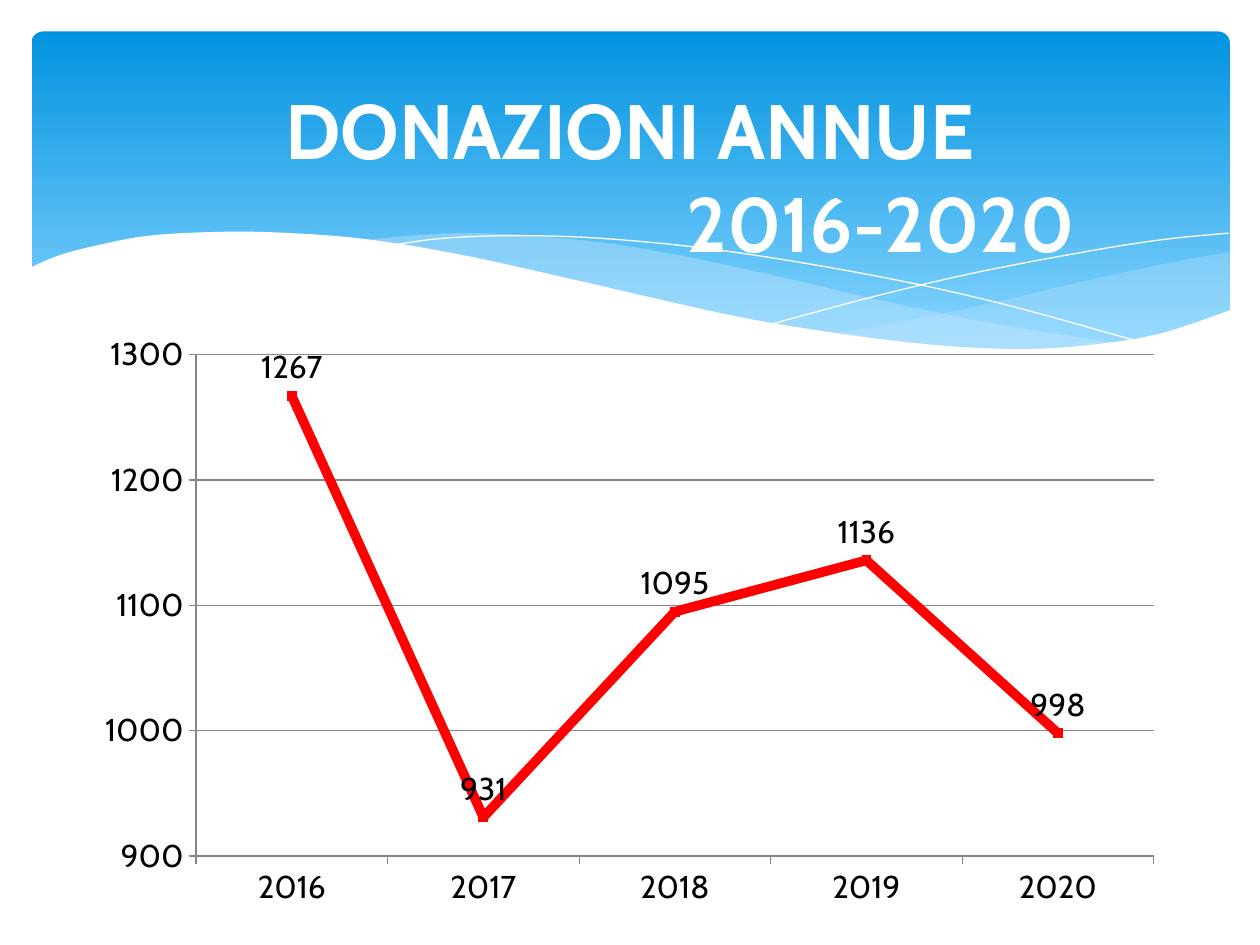
from lxml import etree
from pptx import Presentation
from pptx import util as u
from pptx.chart.data import CategoryChartData
from pptx.dml.color import RGBColor
from pptx.enum import chart as ch, shapes, text
from pptx.oxml.ns import qn

FONT = "Cabin"
WHITE = RGBColor(0xFF, 0xFF, 0xFF)
BLACK = RGBColor(0, 0, 0)
RED = RGBColor(0xFF, 0, 0)
GREY = RGBColor(0x86, 0x86, 0x86)
SKY = RGBColor(0x02, 0x93, 0xE0)
PALE_SKY = RGBColor(0x83, 0xD3, 0xFE)
MIST = RGBColor(0xC6, 0xE7, 0xFC)

# Key points of the wave edges, in inches
RIGHT_TOP = [(9.76, 2), (9.21, 2.1), (8.61, 2.23), (7.53, 2.48), (6.61, 2.65)]
RIGHT_BOTTOM = [(6.61, 2.65), (7.32, 2.74), (8.03, 2.78), (8.72, 2.74),
                (9.28, 2.63), (9.76, 2.47)]
LONG_TOP = [(8.93, 2.73), (8.07, 2.6), (7.06, 2.4), (6.29, 2.22), (5.41, 2.03),
            (4.65, 1.91), (3.8, 1.85), (3.28, 1.87), (2.86, 1.91)]
LONG_BOTTOM = [(2.86, 1.91), (3.62, 2.03), (4.49, 2.22), (5.66, 2.48), (6.65, 2.66),
               (7.48, 2.76), (8.18, 2.78), (8.93, 2.73)]
FALLING_LINE = [(3.09, 1.95), (3.53, 1.89), (4.16, 1.87), (4.89, 1.9), (5.82, 2),
                (6.95, 2.19), (7.95, 2.41), (9.07, 2.72)]
RISING_LINE = [(6.13, 2.57), (6.95, 2.35), (7.76, 2.16), (8.66, 1.99), (9.24, 1.9),
               (9.75, 1.85)]
WHITE_TOP = [(9.77, 2.46), (9.2, 2.65), (8.63, 2.74), (8.09, 2.77), (7.44, 2.74),
             (6.68, 2.65), (5.79, 2.5), (4.47, 2.2), (3.65, 2.02), (2.92, 1.9),
             (2.3, 1.85), (1.77, 1.84), (1.19, 1.87), (0.76, 1.95), (0.46, 2.03),
             (0.23, 2.13)]


def smooth(points, steps=6):
    """Catmull-Rom curve through the key points."""
    padded = [points[0], *points, points[-1]]
    curve = [points[0]]
    for a, b, c, d in zip(padded, padded[1:], padded[2:], padded[3:]):
        for i in range(1, steps + 1):
            t = i / steps
            curve.append(tuple(
                (2 * q + (r - p) * t + (2 * p - 5 * q + 4 * r - v) * t ** 2
                 + (3 * q - p - 3 * r + v) * t ** 3) / 2
                for p, q, r, v in zip(a, b, c, d)))
    return curve


def set_attrs(obj, values):
    for name, value in values.items():
        setattr(obj, name, value)


def add_outline(s, points, closed):
    pts = [(u.Inches(x), u.Inches(y)) for x, y in points]
    fb = s.shapes.build_freeform(*pts[0])
    fb.add_line_segments(pts[1:], close=closed)
    sp = fb.convert_to_shape()
    sp.shadow.inherit = False
    return sp


def add_wave(s, points, color, alpha=100):
    sp = add_outline(s, points, True)
    sp.fill.solid()
    sp.fill.fore_color.rgb = color
    sp.line.fill.background()
    if alpha < 100:
        clr = sp.fill._xPr.find(qn("a:solidFill"))[0]
        etree.SubElement(clr, qn("a:alpha"), val=str(alpha * 1000))


def add_wave_line(s, points):
    sp = add_outline(s, smooth(points), False)
    sp.fill.background()
    sp.line.color.rgb = WHITE
    sp.line.width = u.Pt(0)


def add_banner(s):
    sp = s.shapes.add_shape(shapes.MSO_SHAPE.ROUNDED_RECTANGLE, u.Inches(0.25),
                            u.Inches(0.25), u.Inches(9.51), u.Inches(2.7))
    sp.adjustments[0] = 0.034
    sp.shadow.inherit = False
    sp.line.fill.background()
    sp.fill.gradient()
    sp.fill.gradient_angle = 270
    for stop, color, pos in zip(sp.fill.gradient_stops, (SKY, PALE_SKY), (0, 0.9)):
        stop.color.rgb = color
        stop.position = pos


def add_donation_chart(s):
    data = CategoryChartData()
    data.categories = ["2016", "2017", "2018", "2019", "2020"]
    data.add_series("Series 1", (1267, 931, 1095, 1136, 998))
    chart = s.shapes.add_chart(ch.XL_CHART_TYPE.LINE_MARKERS, u.Inches(0.66),
                               u.Inches(2.57), u.Inches(8.67), u.Inches(4.72), data).chart
    set_attrs(chart, {"has_legend": False, "has_title": False})
    set_attrs(chart.font, {"name": FONT, "size": u.Pt(18)})
    chart.font.color.rgb = BLACK

    # Axes
    set_attrs(chart.value_axis, {"minimum_scale": 900, "maximum_scale": 1300,
                                 "major_unit": 100, "has_major_gridlines": True})
    for axis in (chart.category_axis, chart.value_axis):
        axis.major_tick_mark = ch.XL_TICK_MARK.OUTSIDE
        axis.format.line.color.rgb = GREY
    chart.value_axis.major_gridlines.format.line.color.rgb = GREY

    # Line, markers and labels
    series = chart.plots[0].series[0]
    series.smooth = False
    series.format.line.color.rgb = RED
    series.format.line.width = u.Pt(5.5)
    set_attrs(series.marker, {"style": ch.XL_MARKER_STYLE.SQUARE, "size": 5})
    series.marker.format.fill.solid()
    series.marker.format.fill.fore_color.rgb = RED
    series.marker.format.line.color.rgb = RED
    set_attrs(series.data_labels, {"show_value": True,
                                   "position": ch.XL_LABEL_POSITION.ABOVE})


def add_title(s):
    title = s.shapes.title
    set_attrs(title, {"left": u.Inches(0.5), "top": u.Inches(0.37),
                      "width": u.Inches(9), "height": u.Inches(2.04)})
    tf = title.text_frame
    set_attrs(tf, {"word_wrap": True, "vertical_anchor": text.MSO_ANCHOR.MIDDLE})
    tf.text = "DONAZIONI ANNUE\n2016-2020"
    for p in tf.paragraphs:
        set_attrs(p, {"alignment": text.PP_ALIGN.CENTER, "space_before": u.Pt(0)})
        r = p.runs[0]
        set_attrs(r.font, {"name": FONT, "size": u.Pt(44), "bold": True})
        r.font.color.rgb = WHITE
    # The years sit to the right of the heading
    tf.paragraphs[1]._p.get_or_add_pPr().set("marL", str(u.Inches(3.98)))
    # Bring the title to the front
    title._element.getparent().append(title._element)


def main():
    prs = Presentation()
    prs.slide_width, prs.slide_height = u.Inches(10), u.Inches(7.5)
    s = prs.slides.add_slide(prs.slide_layouts[5])
    # Banner with waves
    add_banner(s)
    add_wave(s, smooth(RIGHT_TOP) + smooth(RIGHT_BOTTOM), MIST, 29)
    add_wave(s, smooth(LONG_TOP) + smooth(LONG_BOTTOM), MIST, 40)
    add_wave_line(s, FALLING_LINE)
    add_wave_line(s, RISING_LINE)
    add_wave(s, smooth(WHITE_TOP) + [(0.23, 3.29), (9.77, 3.29)], WHITE)
    # Content
    add_donation_chart(s)
    add_title(s)
    prs.save("out.pptx")


if __name__ == "__main__":
    main()
